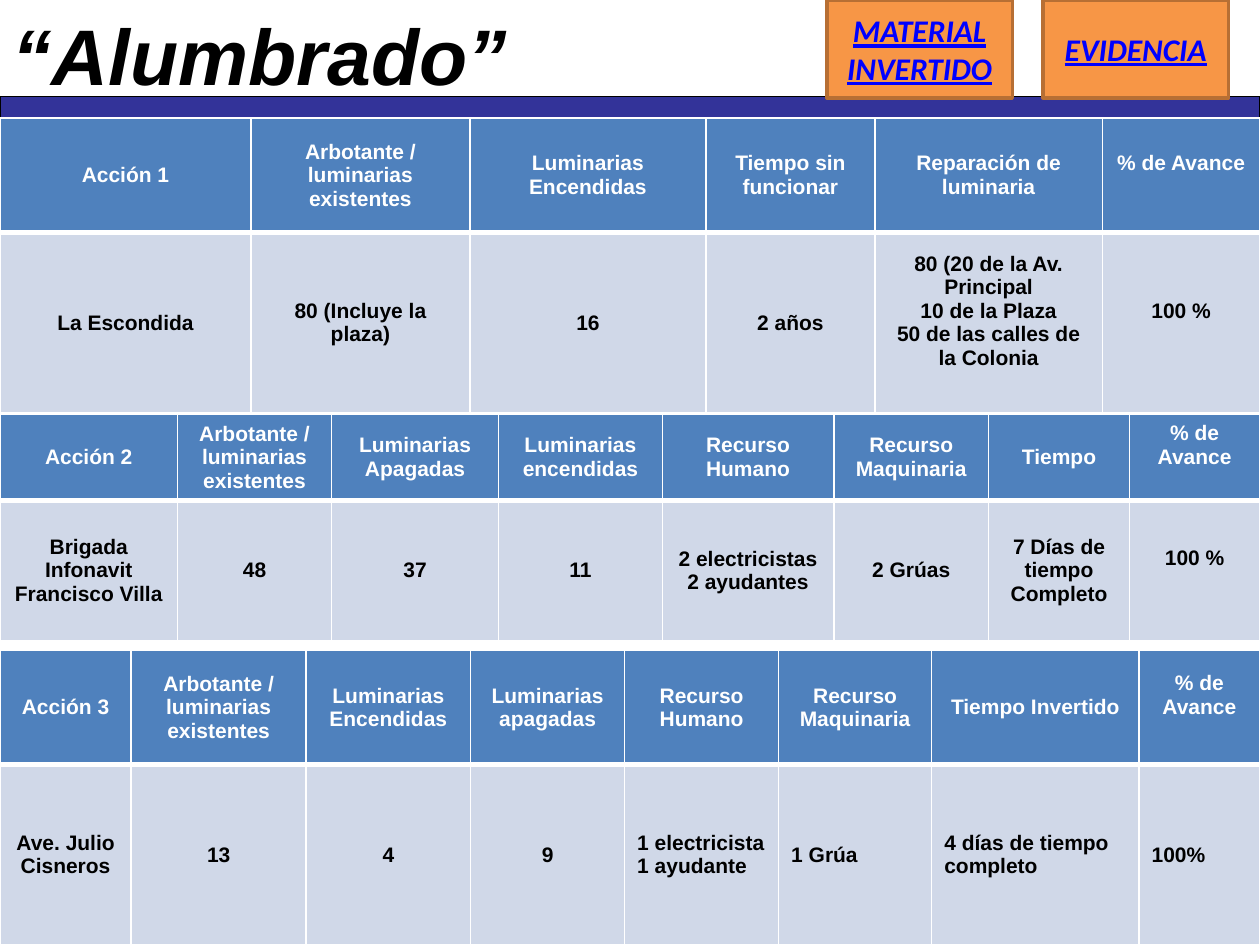
import dataclasses

import pptx
import pptx.dml.color
import pptx.enum.shapes
import pptx.enum.text
import pptx.oxml
import pptx.oxml.ns
import pptx.util

Pt = pptx.util.Pt
Align = pptx.enum.text.PP_ALIGN
Anchor = pptx.enum.text.MSO_ANCHOR
RECT = pptx.enum.shapes.MSO_SHAPE.RECTANGLE


@dataclasses.dataclass(frozen=True)
class Theme:
    white: str = "FFFFFF"
    black: str = "000000"
    navy: str = "333399"
    head: str = "4F81BD"
    body: str = "D0D8E8"
    orange: str = "F79646"
    rust: str = "B76F34"
    link: str = "0000FF"
    sans: str = "Arial"
    label: str = "Calibri"
    title: float = 45
    button: float = 18
    cell: float = 12
    lift: float = 13.8  # one line of table text


THEME = Theme()


def color(code):
    return pptx.dml.color.RGBColor.from_string(code)


def style(frame, code, align, **form):
    """Format every run of a text frame."""
    for para in frame.paragraphs:
        para.alignment = align
        for run in para.runs:
            run.font.color.rgb = color(code)
            for key, value in form.items():
                setattr(run.font, key, value)


def paint(shape, fill, line, width):
    shape.shadow.inherit = False
    shape.fill.solid()
    shape.fill.fore_color.rgb = color(fill)
    shape.line.color.rgb = color(line)
    shape.line.width = Pt(width)


def edge(cell, base):
    """Draw white borders; base is the bottom width in points."""
    props = cell._tc.get_or_add_tcPr()
    widths = {"lnL": 1, "lnR": 1, "lnT": 1, "lnB": base}
    for spot, (tag, width) in enumerate(widths.items()):
        props.insert(spot, pptx.oxml.parse_xml(
            f'<a:{tag} {pptx.oxml.ns.nsdecls("a")} w="{Pt(width)}">'
            f'<a:solidFill><a:srgbClr val="{THEME.white}"/></a:solidFill>'
            f'</a:{tag}>'))


def banner(slide, left, top, width, height):
    """Title above a navy rule."""
    bar = 12.5
    rule = slide.shapes.add_shape(
        RECT, Pt(left), Pt(top + height - bar), Pt(width), Pt(bar))
    paint(rule, THEME.navy, THEME.black, 0.75)
    title = slide.shapes.title
    box = {"left": left, "top": top, "width": 596, "height": 62}
    for key, value in box.items():
        setattr(title, key, Pt(value))
    frame = title.text_frame
    frame.text = "“Alumbrado”"
    frame.word_wrap = True
    frame.auto_size = pptx.enum.text.MSO_AUTO_SIZE.NONE
    frame.vertical_anchor = Anchor.MIDDLE
    style(frame, THEME.black, Align.LEFT, name=THEME.sans,
          size=Pt(THEME.title), bold=True, italic=True)


def button(slide, text, left, top, width, height):
    shape = slide.shapes.add_shape(
        RECT, Pt(left), Pt(top), Pt(width), Pt(height))
    paint(shape, THEME.orange, THEME.rust, 2)
    frame = shape.text_frame
    frame.text = text
    frame.word_wrap = True
    frame.vertical_anchor = Anchor.MIDDLE
    style(frame, THEME.link, Align.CENTER, name=THEME.label,
          size=Pt(THEME.button), bold=True, italic=True, underline=True)


def grid(slide, left, top, cols, rows, texts, high=(), flush=()):
    """Action table; high cells sit half a line up, flush cells align left."""
    table = slide.shapes.add_table(
        len(rows), len(cols), Pt(left), Pt(top),
        Pt(sum(cols)), Pt(sum(rows))).table
    table.horz_banding = False
    for col, width in zip(table.columns, cols):
        col.width = Pt(width)
    looks = ((THEME.head, THEME.white, 3), (THEME.body, THEME.black, 1))
    for r, (fill, ink, base) in enumerate(looks):
        table.rows[r].height = Pt(rows[r])
        for c, text in enumerate(texts[r]):
            cell = table.cell(r, c)
            cell.text = text
            cell.vertical_anchor = Anchor.MIDDLE
            cell.fill.solid()
            cell.fill.fore_color.rgb = color(fill)
            if (r, c) in high:
                cell.margin_bottom = Pt(3.6 + THEME.lift)
            align = Align.LEFT if (r, c) in flush else Align.CENTER
            style(cell.text_frame, ink, align, name=THEME.sans,
                  size=Pt(THEME.cell), bold=True)
            edge(cell, base)


def main():
    deck = pptx.Presentation()
    deck.slide_width, deck.slide_height = Pt(720), Pt(540)
    slide = deck.slides.add_slide(deck.slide_layouts[5])
    banner(slide, 0, 0, 720, 67.5)

    # Three stacked action tables
    lamps = "Arbotante /\nluminarias existentes"
    staff = ["Recurso Humano", "Recurso Maquinaria"]
    done = "% de Avance"
    grid(slide, 0, 67.5, [143.5, 125, 135, 96.5, 130, 90], [65.5, 103], [
        ["Acción 1", lamps, "Luminarias Encendidas",
         "Tiempo sin funcionar", "Reparación de luminaria", done],
        ["La Escondida", "80 (Incluye la plaza)", "16", "2 años",
         "80 (20 de la Av. Principal\v10 de la Plaza\v"
         "50 de las calles de la Colonia", "100 %"],
    ], high={(0, 5), (1, 4), (1, 5)})
    grid(slide, 0, 236.5, [101.5, 88, 95.5, 93.5, 98, 88.5, 80.5, 74.5],
         [49.5, 80], [
        ["Acción 2", lamps, "Luminarias\nApagadas", "Luminarias encendidas",
         *staff, "Tiempo", done],
        ["Brigada Infonavit Francisco Villa", "48", "37", "11",
         "2 electricistas\v2 ayudantes", "2 Grúas",
         "7 Días de tiempo Completo", "100 %"],
    ], high={(0, 7), (1, 7)})
    grid(slide, 0, 371.5, [75, 100, 94, 88, 88, 87.5, 118.5, 69],
         [65.5, 103], [
        ["Acción 3", lamps, "Luminarias Encendidas", "Luminarias apagadas",
         *staff, "Tiempo Invertido", done],
        ["Ave. Julio Cisneros", "13", "4", "9",
         "1 electricista\n1 ayudante", "1 Grúa",
         "4 días de tiempo completo", "100%"],
    ], high={(0, 7)}, flush={(1, c) for c in range(4, 8)})

    # Buttons at top right
    for spot, text in enumerate(["MATERIAL INVERTIDO", "EVIDENCIA"]):
        button(slide, text, 472.5 + 123.5 * spot, 0, 106, 56)
    deck.save("out.pptx")


if __name__ == "__main__":
    main()
